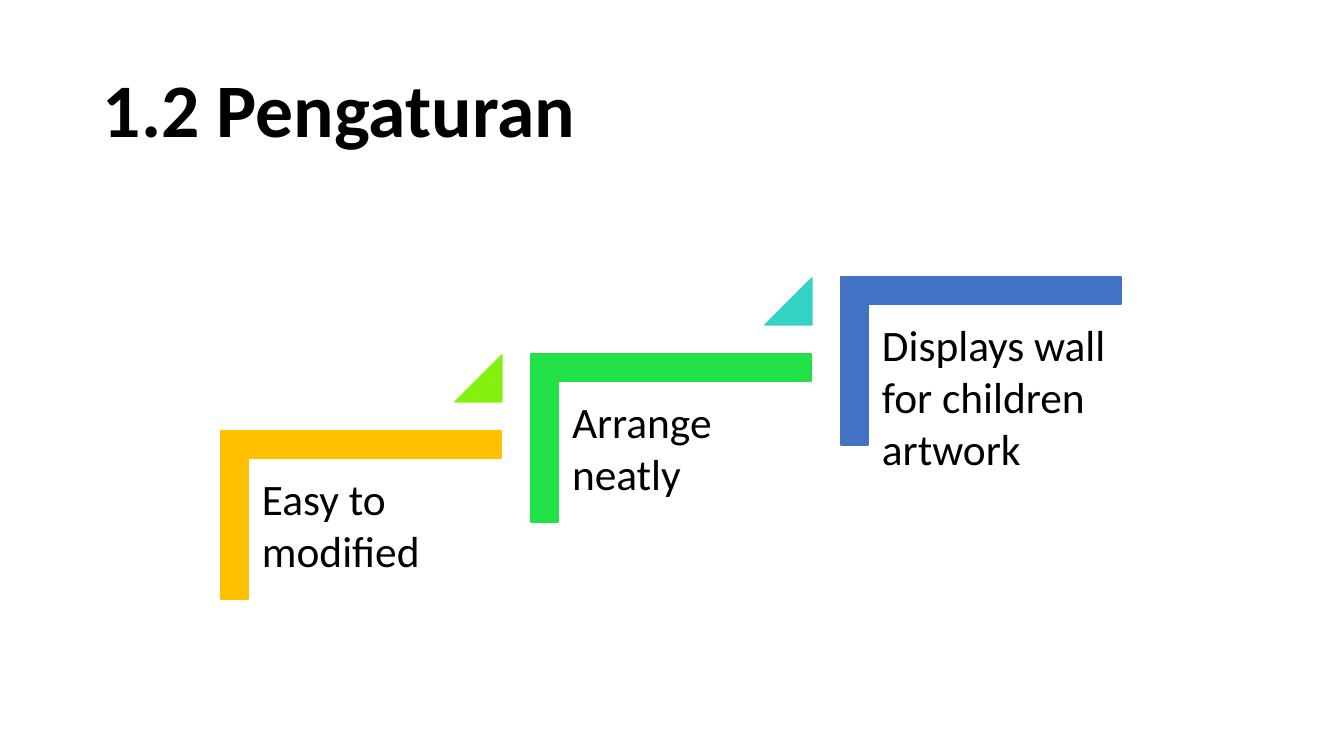
from pptx import Presentation
from pptx.dml.color import RGBColor
from pptx.enum.shapes import MSO_SHAPE
from pptx.enum.text import MSO_ANCHOR
from pptx.util import Pt

CORNER = MSO_SHAPE.CORNER
TRIANGLE = MSO_SHAPE.ISOSCELES_TRIANGLE
TOP, MIDDLE = MSO_ANCHOR.TOP, MSO_ANCHOR.MIDDLE

TITLE = "1.2 Pengaturan"
STEPS = [
    ("Easy to modified", "FFC000", "86F011"),
    ("Arrange neatly", "22E147", "33D2C5"),
    ("Displays wall for children artwork", "4372C4", None),
]
FIRST_X, FIRST_Y = 277, 375
STEP_X, STEP_Y = 310, -77


def px(n):
    return round(n * 914400 / 100.8)


def color(value):
    return RGBColor.from_string(value)


def add_shape(s, kind, box, fill, adjustments):
    sp = s.shapes.add_shape(kind, *map(px, box))
    sp.shadow.inherit = False
    sp.fill.solid()
    sp.fill.fore_color.rgb = color(fill)
    sp.line.color.rgb = color(fill)
    sp.line.width = Pt(1)
    for i, value in enumerate(adjustments):
        sp.adjustments[i] = value
    return sp


def add_text(s, text, box, size, inset, anchor=TOP, bold=False, spacing=1.0):
    tf = s.shapes.add_textbox(*map(px, box)).text_frame
    tf.word_wrap = True
    tf.vertical_anchor = anchor
    tf.margin_left = tf.margin_right = px(inset)
    tf.margin_top = tf.margin_bottom = px(inset)
    p = tf.paragraphs[0]
    p.text = text
    p.line_spacing = spacing
    p.font.name = "Calibri"
    p.font.size = Pt(size)
    p.font.bold = bold
    p.font.color.rgb = color("000000")


prs = Presentation()
prs.slide_width, prs.slide_height = px(1344), px(756)
s = prs.slides.add_slide(prs.slide_layouts[6])

add_text(s, TITLE, (93, 40, 1159, 146), 54, 10, MIDDLE, True, 0.9)

for i, (label, fill, triangle_fill) in enumerate(STEPS):
    x, y = FIRST_X + i * STEP_X, FIRST_Y + i * STEP_Y
    corner = add_shape(s, CORNER, (x, y, 168, 280), fill, (0.16, 0.16))
    corner.rotation = 90
    add_text(s, label, (x - 28, y + 84, 253, 222), 31, 13)
    if triangle_fill:
        add_shape(s, TRIANGLE, (x + 178, y - 20, 47, 47), triangle_fill, (1,))

prs.save("out.pptx")
